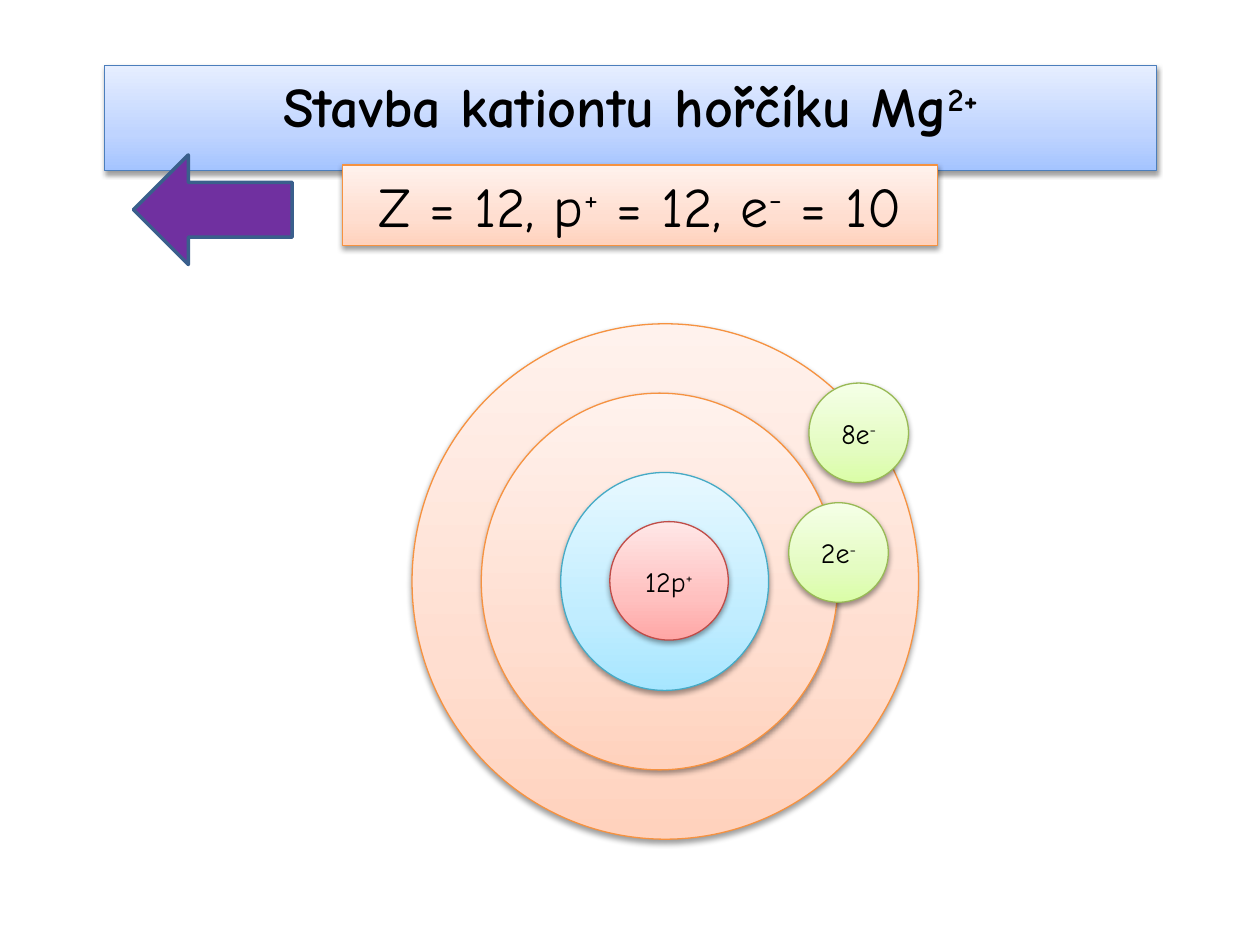
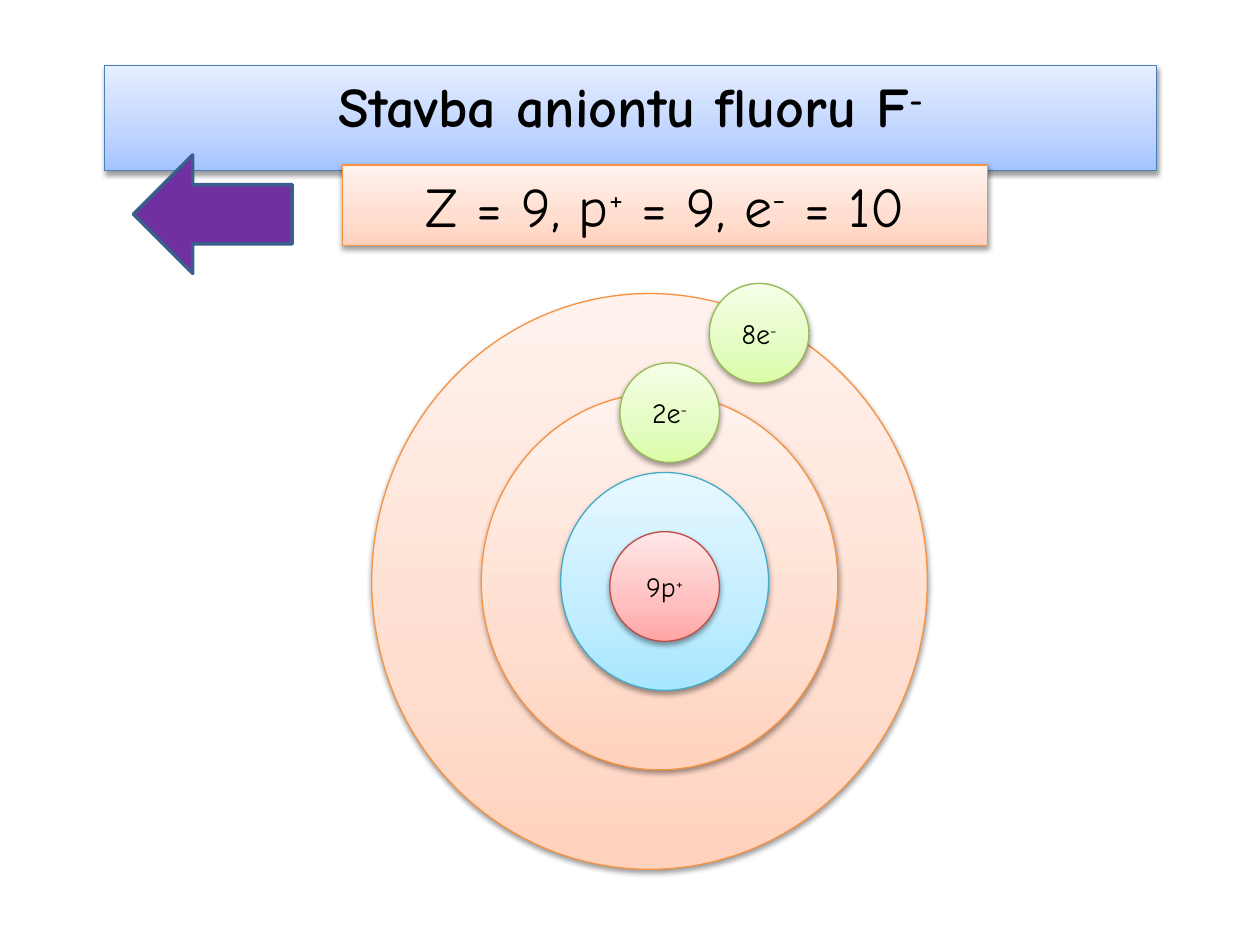
from dataclasses import dataclass

from pptx import Presentation
from pptx import util as u
from pptx.dml import color
from pptx.enum import shapes, text
from pptx.oxml import parse_xml
from pptx.oxml import ns
from copy import deepcopy


@dataclass(frozen=True)
class Tone:
    low: str
    middle: str
    high: str
    line: str


@dataclass(frozen=True)
class Theme:
    font: str = "Comic Neue"
    heading_size: int = 32
    label_size: int = 16
    ink: str = "000000"
    thin: float = 0.75
    thick: float = 2
    arrow_fill: str = "7030A0"
    arrow_line: str = "3A5F8C"
    blue: Tone = Tone("A4C4FF", "BFD4FF", "E6EEFF", "4B7EBC")
    orange: Tone = Tone("FFD2BD", "FFDED0", "FFF2ED", "F69240")
    aqua: Tone = Tone("A7E6FF", "C1EDFF", "E7F8FF", "46AAC5")
    red: Tone = Tone("FFA6A5", "FFC0BF", "FFE7E7", "BF4C48")
    green: Tone = Tone("DAFDA7", "E4FCC2", "F5FFE7", "98B955")


@dataclass(frozen=True)
class Ion:
    title: str
    counts: str
    counts_width: float
    arrow_height: float
    outer_shell: tuple
    protons: str
    proton_place: tuple
    electrons: tuple


THEME = Theme()
KIND = shapes.MSO_SHAPE
ELECTRON_SIZE = 0.79
INNER_SHELL = (3.82, 3.12, 2.83, 2.99)
NUCLEUS = (4.45, 3.75, 1.65, 1.73)

IONS = (
    Ion("Stavba kationtu hořčíku Mg^2+", "Z = 12, p^+^ = 12, e^-^ = 10",
        4.72, 0.87, (3.27, 2.57, 4.02, 4.09), "12p^+", (4.84, 4.14, 0.94, 0.94),
        (("2e^-", 6.26, 3.99), ("8e^-", 6.42, 3.04))),
    Ion("Stavba aniontu fluoru F^-", "Z = 9, p^+^ = 9, e^-^ = 10",
        5.12, 0.94, (2.95, 2.33, 4.41, 4.57), "9p^+", (4.84, 4.22, 0.87, 0.87),
        (("2e^-", 4.92, 2.88), ("8e^-", 5.63, 2.25))),
)


def rgb(value):
    return color.RGBColor.from_string(value)


def outline(shape, value, width):
    shape.line.color.rgb = rgb(value)
    shape.line.width = u.Pt(width)


def add_soft_shadow(shape):
    shape.shadow.inherit = False
    effects = shape._element.spPr.find(ns.qn("a:effectLst"))
    effects.append(parse_xml(
        f'<a:outerShdw {ns.nsdecls("a")} blurRad="40000" dist="20000" '
        'dir="5400000" rotWithShape="0"><a:srgbClr val="000000">'
        '<a:alpha val="38000"/></a:srgbClr></a:outerShdw>'))


def apply_tone(shape, tone):
    shape.fill.gradient()
    shape.fill.gradient_angle = 90
    stop_list = next(shape._element.spPr.iter(ns.qn("a:gsLst")))
    stop_list.insert(1, deepcopy(stop_list[0]))
    levels = ((0, tone.low), (0.35, tone.middle), (1, tone.high))
    for stop, (position, value) in zip(shape.fill.gradient_stops, levels):
        stop.position = position
        stop.color.rgb = rgb(value)
    outline(shape, tone.line, THEME.thin)
    add_soft_shadow(shape)


def write_formula(shape, formula, size, bold=False):
    paragraph = shape.text_frame.paragraphs[0]
    paragraph.alignment = text.PP_ALIGN.CENTER
    for index, part in enumerate(formula.split("^")):
        run = paragraph.add_run()
        run.text = part
        run.font.name = THEME.font
        run.font.size = u.Pt(size)
        run.font.bold = bold
        run.font.color.rgb = rgb(THEME.ink)
        if index % 2:
            run.font._element.set("baseline", "30000")


def place(shape, left, top, width, height):
    shape.left, shape.top = u.Inches(left), u.Inches(top)
    shape.width, shape.height = u.Inches(width), u.Inches(height)


def add_preset(slide, kind, box):
    return slide.shapes.add_shape(kind, *map(u.Inches, box))


def format_banner(banner, formula, tone, bold=False):
    apply_tone(banner, tone)
    frame = banner.text_frame
    frame.word_wrap = True
    frame.auto_size = text.MSO_AUTO_SIZE.SHAPE_TO_FIT_TEXT
    frame.vertical_anchor = text.MSO_ANCHOR.TOP
    write_formula(banner, formula, THEME.heading_size, bold)


def add_circle(slide, box, tone, formula=None):
    circle = add_preset(slide, KIND.OVAL, box)
    apply_tone(circle, tone)
    if formula:
        circle.text_frame.vertical_anchor = text.MSO_ANCHOR.MIDDLE
        write_formula(circle, formula, THEME.label_size)


def add_back_arrow(slide, height):
    arrow = add_preset(slide, KIND.LEFT_ARROW, (1.06, 1.23, 1.26, height))
    arrow.shadow.inherit = False
    arrow.fill.solid()
    arrow.fill.fore_color.rgb = rgb(THEME.arrow_fill)
    outline(arrow, THEME.arrow_line, THEME.thick)


def add_atom(slide, ion):
    add_circle(slide, ion.outer_shell, THEME.orange)
    add_circle(slide, INNER_SHELL, THEME.orange)
    add_circle(slide, NUCLEUS, THEME.aqua)
    add_circle(slide, ion.proton_place, THEME.red, ion.protons)
    for label, left, top in ion.electrons:
        add_circle(slide, (left, top, ELECTRON_SIZE, ELECTRON_SIZE), THEME.green, label)


def add_ion_slide(deck, ion):
    slide = deck.slides.add_slide(deck.slide_layouts[5])
    title = slide.shapes.title
    place(title, 0.83, 0.52, 8.35, 0.64)
    format_banner(title, ion.title, THEME.blue, bold=True)
    counts = add_preset(slide, KIND.RECTANGLE, (2.72, 1.31, ion.counts_width, 0.64))
    format_banner(counts, ion.counts, THEME.orange)
    add_back_arrow(slide, ion.arrow_height)
    add_atom(slide, ion)


def main():
    deck = Presentation()
    deck.slide_width, deck.slide_height = u.Inches(10), u.Inches(7.5)
    for ion in IONS:
        add_ion_slide(deck, ion)
    deck.save("out.pptx")


if __name__ == "__main__":
    main()
